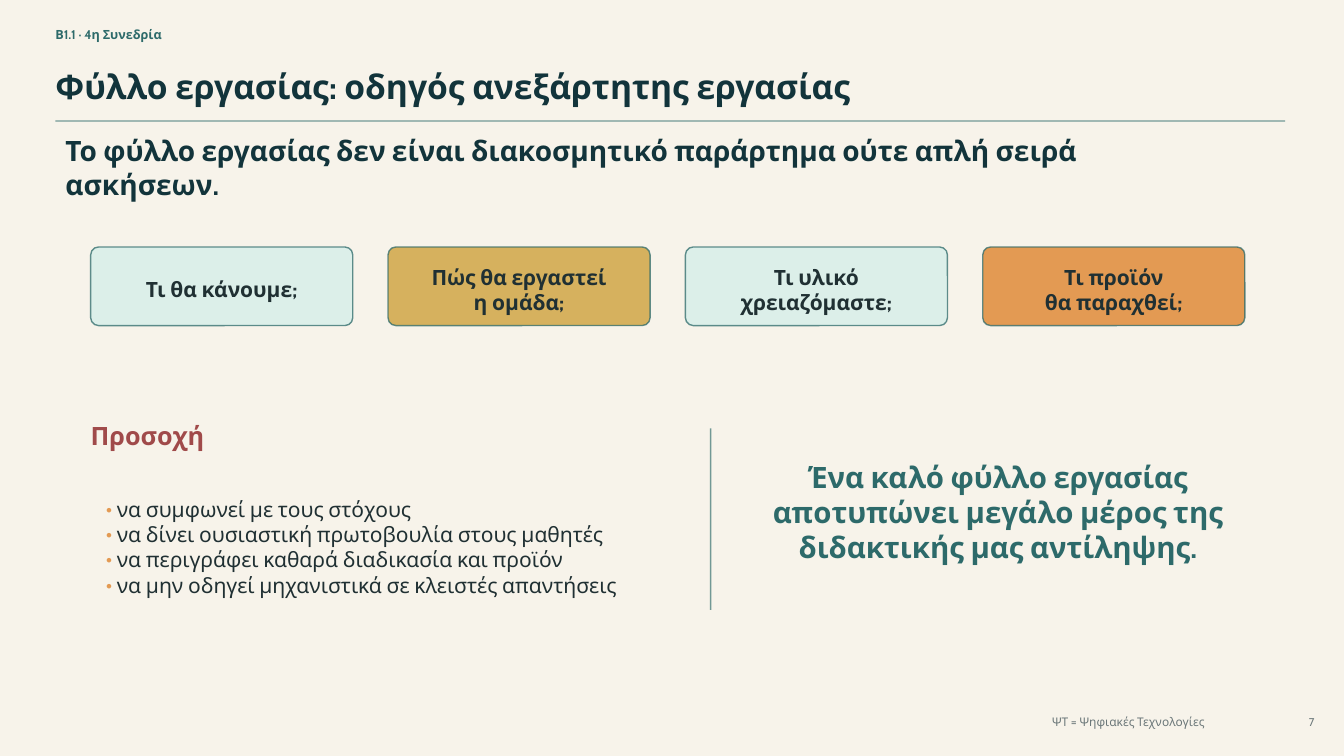
from dataclasses import dataclass

from lxml import etree
from pptx import Presentation
from pptx import util as u
from pptx.dml.color import RGBColor
from pptx.enum import shapes, text
from pptx.oxml import ns
from pptx.shapes.connector import Connector
from pptx.slide import Slide
from pptx.text.text import TextFrame

Pt = u.Pt
LEFT, CENTER, RIGHT = text.PP_ALIGN.LEFT, text.PP_ALIGN.CENTER, text.PP_ALIGN.RIGHT

CREAM = RGBColor(0xF7, 0xF3, 0xEA)
TEAL = RGBColor(0x2D, 0x6A, 0x6A)
NAVY = RGBColor(0x12, 0x34, 0x3B)
INK = RGBColor(0x20, 0x30, 0x33)
GREY = RGBColor(0x6B, 0x77, 0x79)
RED = RGBColor(0xA0, 0x4A, 0x4A)
MINT = RGBColor(0xDC, 0xEF, 0xE9)
GOLD = RGBColor(0xD6, 0xB1, 0x5E)
ORANGE = RGBColor(0xE3, 0x9A, 0x53)

FONT = "Cabin"
CARD_LEFT, CARD_TOP, CARD_WIDTH, CARD_HEIGHT = 64.8, 176.4, 187.2, 56.16
CARD_PITCH = 212.4
CARD_MARGINS = (8.64, 8.64, 8.64, 4.32)
BULLET_INDENT = 7.9


@dataclass(frozen=True)
class Label:
    left: float
    top: float
    width: float
    height: float
    lines: tuple[str, ...]
    size: float
    color: RGBColor
    bold: bool = True
    align: text.PP_ALIGN = LEFT
    bullet: RGBColor | None = None


@dataclass(frozen=True)
class Card:
    lines: tuple[str, ...]
    fill: RGBColor


@dataclass(frozen=True)
class Rule:
    x1: float
    y1: float
    x2: float
    y2: float


LABELS = [
    Label(39.6, 15.84, 259.2, 18, ("Β1.1 · 4η Συνεδρία",), 9, TEAL),
    Label(39.6, 41.76, 640.8, 39.6,
          ("Φύλλο εργασίας: οδηγός ανεξάρτητης εργασίας",), 24, NAVY),
    Label(46.8, 104.4, 806.4, 30.24,
          ("Το φύλλο εργασίας δεν είναι διακοσμητικό παράρτημα ούτε απλή σειρά ασκήσεων.",),
          20, NAVY),
    Label(64.8, 298.8, 100.8, 24.48, ("Προσοχή",), 18, RED),
    Label(75.6, 334.8, 388.8, 111.6,
          ("να συμφωνεί με τους στόχους",
           "να δίνει ουσιαστική πρωτοβουλία στους μαθητές",
           "να περιγράφει καθαρά διαδικασία και προϊόν",
           "να μην οδηγεί μηχανιστικά σε κλειστές απαντήσεις"),
          15, INK, bold=False, bullet=ORANGE),
    Label(536.4, 327.6, 352.8, 75.6,
          ("Ένα καλό φύλλο εργασίας αποτυπώνει μεγάλο μέρος της διδακτικής μας αντίληψης.",),
          21, TEAL, align=CENTER),
    Label(619.2, 507.6, 241.2, 15.84, ("ΨΤ = Ψηφιακές Τεχνολογίες",),
          8.5, GREY, bold=False, align=RIGHT),
    Label(923.04, 508.32, 15.84, 14.4, ("7",), 8, GREY, bold=False, align=RIGHT),
]

CARDS = [
    Card(("Τι θα κάνουμε;",), MINT),
    Card(("Πώς θα εργαστεί", "η ομάδα;"), GOLD),
    Card(("Τι υλικό", "χρειαζόμαστε;"), MINT),
    Card(("Τι προϊόν", "θα παραχθεί;"), ORANGE),
]

RULES = [Rule(39.6, 86.4, 918, 86.4), Rule(507.6, 306, 507.6, 435.6)]


def write_text(tf: TextFrame, lines: tuple[str, ...], *, size: float, color: RGBColor,
               bold: bool = True, align: text.PP_ALIGN = LEFT,
               bullet: RGBColor | None = None,
               margins: tuple[float, float, float, float] = (0, 0, 0, 0)) -> None:
    tf.word_wrap = True
    tf.vertical_anchor = text.MSO_ANCHOR.MIDDLE
    tf.margin_left, tf.margin_top, tf.margin_right, tf.margin_bottom = map(Pt, margins)
    for i, line in enumerate(lines):
        p = tf.paragraphs[0] if i == 0 else tf.add_paragraph()
        p.alignment = align
        if bullet is not None:
            pPr = p._p.get_or_add_pPr()
            pPr.set("marL", str(Pt(BULLET_INDENT)))
            pPr.set("indent", str(-Pt(BULLET_INDENT)))
            bu_color = etree.SubElement(pPr, ns.qn("a:buClr"))
            etree.SubElement(bu_color, ns.qn("a:srgbClr"), val=str(bullet))
            etree.SubElement(pPr, ns.qn("a:buFont"), typeface=FONT)
            etree.SubElement(pPr, ns.qn("a:buChar"), char="•")
        r = p.add_run()
        r.text = line
        r.font.name = FONT
        r.font.size = Pt(size)
        r.font.bold = bold
        r.font.color.rgb = color


def style_line(line, opacity: int) -> None:
    line.color.rgb = TEAL
    line.width = Pt(1)
    color = line.fill._xPr.find(ns.qn("a:solidFill"))[0]
    etree.SubElement(color, ns.qn("a:alpha"), val=str(opacity * 1000))


def add_label(s: Slide, label: Label) -> None:
    sp = s.shapes.add_textbox(Pt(label.left), Pt(label.top), Pt(label.width), Pt(label.height))
    write_text(sp.text_frame, label.lines, size=label.size, color=label.color,
               bold=label.bold, align=label.align, bullet=label.bullet)


def add_card(s: Slide, card: Card, left: float) -> None:
    sp = s.shapes.add_shape(shapes.MSO_SHAPE.ROUNDED_RECTANGLE, Pt(left), Pt(CARD_TOP),
                            Pt(CARD_WIDTH), Pt(CARD_HEIGHT))
    sp.adjustments[0] = 0.1
    sp.shadow.inherit = False
    sp.fill.solid()
    sp.fill.fore_color.rgb = card.fill
    style_line(sp.line, 75)
    write_text(sp.text_frame, card.lines, size=15, color=INK, align=CENTER,
               margins=CARD_MARGINS)


def add_rule(s: Slide, rule: Rule) -> Connector:
    c = s.shapes.add_connector(shapes.MSO_CONNECTOR.STRAIGHT, Pt(rule.x1), Pt(rule.y1),
                               Pt(rule.x2), Pt(rule.y2))
    style_line(c.line, 65)
    etree.SubElement(c._element.spPr, ns.qn("a:effectLst"))
    return c


def main() -> None:
    prs = Presentation()
    prs.slide_width, prs.slide_height = Pt(960), Pt(540)
    s = prs.slides.add_slide(prs.slide_layouts[6])
    s.background.fill.solid()
    s.background.fill.fore_color.rgb = CREAM
    for rule in RULES:
        add_rule(s, rule)
    for i, card in enumerate(CARDS):
        add_card(s, card, CARD_LEFT + i * CARD_PITCH)
    for label in LABELS:
        add_label(s, label)
    prs.save("out.pptx")


if __name__ == "__main__":
    main()
